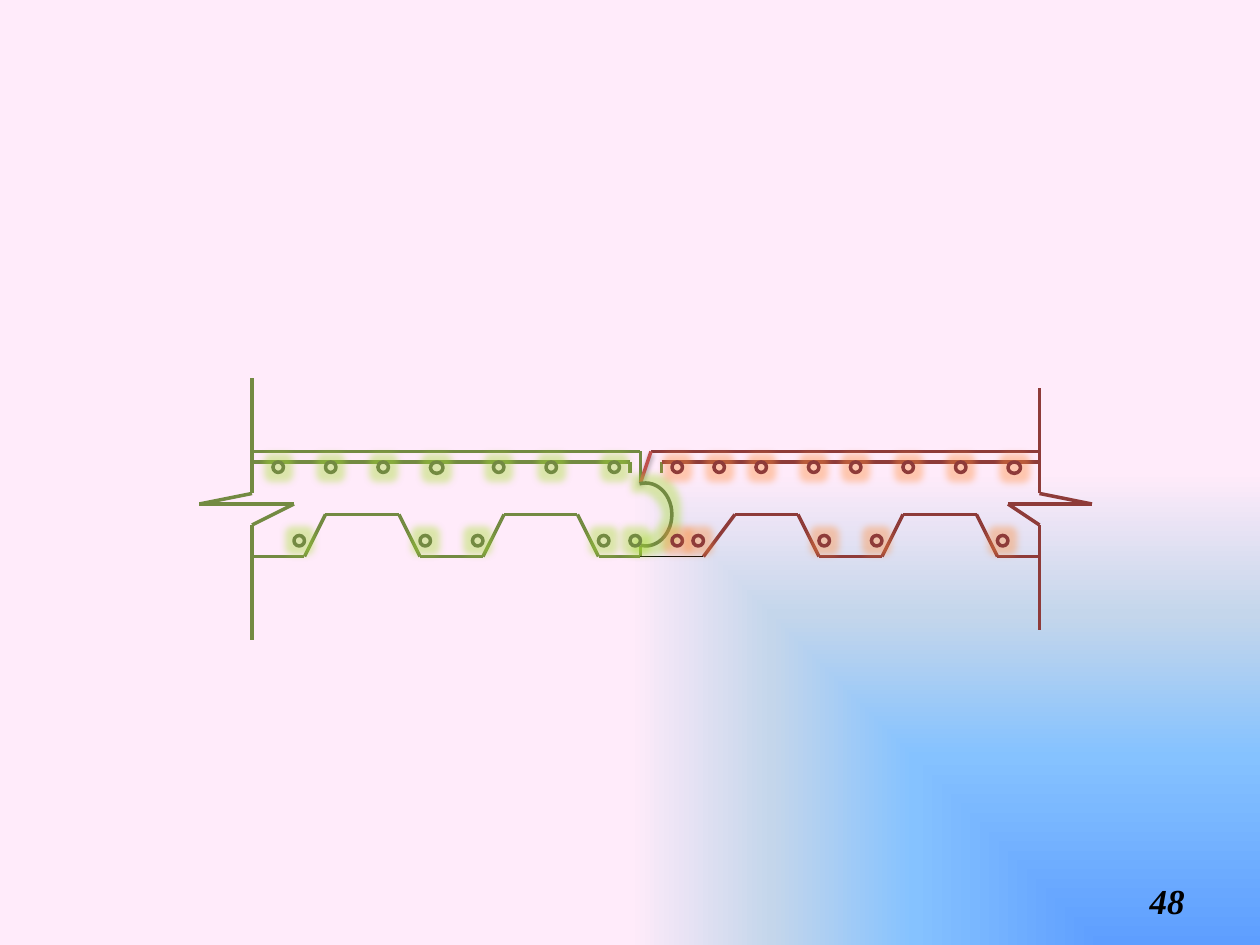
from itertools import pairwise

from lxml import etree
from pptx import Presentation
from pptx.dml.color import RGBColor
from pptx.enum.shapes import MSO_CONNECTOR, MSO_SHAPE
from pptx.enum.text import MSO_ANCHOR, PP_ALIGN
from pptx.oxml import parse_xml
from pptx.oxml.ns import qn
from pptx.util import Pt

STRAIGHT = MSO_CONNECTOR.STRAIGHT
OVAL, ARC = MSO_SHAPE.OVAL, MSO_SHAPE.ARC
MIDDLE, RIGHT = MSO_ANCHOR.MIDDLE, PP_ALIGN.RIGHT
NAMESPACES = (
    'xmlns:a="http://schemas.openxmlformats.org/drawingml/2006/main" '
    'xmlns:p="http://schemas.openxmlformats.org/presentationml/2006/main"'
)

COLORS = {
    "green": "738A42",
    "red": "8E3B39",
    "bright red": "C0504D",
    "black": "000000",
    "green glow": "A7DF34",
    "red glow": "FF8F3D",
}
BACKGROUND_STOPS = {0: "5E9EFF", 40: "85C2FF", 70: "C4D6EB", 100: "FFEBFA"}

# Levels of the panel section, from top to bottom
TOP, BAR, LIP, BREAK, RIB, BOTTOM = 258, 264, 276, 288, 294, 318
LEFT_EDGE, JOINT, RIGHT_EDGE = 144, 366, 594
RING = 6
WIDE_RING = (7.2, 6.5)

GREEN_PATHS = [
    [(LEFT_EDGE, TOP), (JOINT, TOP), (JOINT, LIP)],
    [(LEFT_EDGE, BOTTOM), (174, BOTTOM), (186, RIB), (228, RIB), (240, BOTTOM),
     (276, BOTTOM), (288, RIB), (330, RIB), (342, BOTTOM), (JOINT, BOTTOM), (JOINT, 312)],
    [(LEFT_EDGE, BAR), (360, BAR), (360, 270)],
    [(378, BAR), (378, 270)],
    [(LEFT_EDGE, 216), (LEFT_EDGE, 282), (114, BREAK), (168, BREAK),
     (LEFT_EDGE, 300), (LEFT_EDGE, 366)],
]
RED_PATHS = [
    [(372, TOP), (RIGHT_EDGE, TOP)],
    [(402, BOTTOM), (420, RIB), (456, RIB), (468, BOTTOM), (504, BOTTOM),
     (516, RIB), (558, RIB), (570, BOTTOM), (RIGHT_EDGE, BOTTOM)],
    [(378, BAR), (RIGHT_EDGE, BAR)],
    [(RIGHT_EDGE, 222), (RIGHT_EDGE, 282), (624, BREAK), (576, BREAK),
     (RIGHT_EDGE, 300), (RIGHT_EDGE, 360)],
]
RINGS = {
    "green": {BAR: [156, 186, 216, 246, 282, 312, 348], 306: [168, 240, 270, 342, 360]},
    "red": {BAR: [384, 408, 432, 462, 486, 516, 546, 576], 306: [384, 396, 468, 498, 570]},
}
WIDE_RING_LEFTS = {246, 576}


def color(name):
    return RGBColor.from_string(COLORS[name])


def set_background(slide):
    stops = "".join(
        f'<a:gs pos="{position * 1000}"><a:srgbClr val="{value}"/></a:gs>'
        for position, value in BACKGROUND_STOPS.items()
    )
    background = parse_xml(
        f"<p:bg {NAMESPACES}><p:bgPr><a:gradFill><a:gsLst>{stops}</a:gsLst>"
        '<a:path path="rect"><a:fillToRect l="100000" t="100000"/></a:path>'
        "</a:gradFill><a:effectLst/></p:bgPr></p:bg>"
    )
    slide.element.find(qn("p:cSld")).insert(0, background)


def add_effect(shape, kind, color_name, opacity, **settings):
    """Give the shape one effect, such as a glow or an outer shadow."""
    properties = shape.element.find(qn("p:spPr"))
    effects = etree.SubElement(properties, qn("a:effectLst"))
    values = {key: str(value) for key, value in settings.items()}
    effect = etree.SubElement(effects, qn(f"a:{kind}"), values)
    tint = etree.SubElement(effect, qn("a:srgbClr"), val=COLORS[color_name])
    etree.SubElement(tint, qn("a:alpha"), val=str(opacity * 1000))


def add_line(slide, start, end, color_name, width=2):
    line = slide.shapes.add_connector(STRAIGHT, *(Pt(value) for value in (*start, *end)))
    line.line.color.rgb = color(color_name)
    line.line.width = Pt(width)
    return line


def add_plain_line(slide, start, end, color_name, width=2):
    line = add_line(slide, start, end, color_name, width)
    etree.SubElement(line.element.find(qn("p:spPr")), qn("a:effectLst"))


def add_paths(slide, paths, color_name):
    for path in paths:
        for start, end in pairwise(path):
            add_plain_line(slide, start, end, color_name)


def add_glowing_outline(slide, kind, frame, color_name):
    outline = slide.shapes.add_shape(kind, *(Pt(value) for value in frame))
    outline.fill.background()
    outline.line.color.rgb = color(color_name)
    outline.line.width = Pt(2)
    add_effect(outline, "glow", f"{color_name} glow", 40, rad=Pt(8))
    return outline


def add_rings(slide):
    for color_name, rows in RINGS.items():
        for top, lefts in rows.items():
            for left in lefts:
                size = WIDE_RING if left in WIDE_RING_LEFTS else (RING, RING)
                add_glowing_outline(slide, OVAL, (left, top, *size), color_name)


def add_joint(slide):
    slope = add_line(slide, (372, TOP), (JOINT, LIP), "bright red")
    add_effect(slope, "outerShdw", "black", 38,
               blurRad=Pt(3.1), dist=Pt(1.6), dir=5400000, rotWithShape=0)
    add_plain_line(slide, (JOINT, BOTTOM), (402, BOTTOM), "black", width=1)
    arc = add_glowing_outline(slide, ARC, (354, LIP, 30, 36), "green")
    arc.adjustments[0] = 155.23
    arc.adjustments[1] = 59.84


def add_page_number(slide):
    box = slide.shapes.add_textbox(Pt(516), Pt(500.4), Pt(168), Pt(28.8))
    frame = box.text_frame
    frame.word_wrap = True
    frame.vertical_anchor = MIDDLE
    frame.text = "48"
    para = frame.paragraphs[0]
    para.alignment = RIGHT
    font = para.runs[0].font
    font.name = "Times New Roman"
    font.size = Pt(20)
    font.bold = font.italic = True
    font.color.rgb = color("black")


def main():
    deck = Presentation()
    deck.slide_width, deck.slide_height = Pt(720), Pt(540)
    page = deck.slides.add_slide(deck.slide_layouts[6])
    set_background(page)
    add_paths(page, GREEN_PATHS, "green")
    add_paths(page, RED_PATHS, "red")
    add_joint(page)
    add_rings(page)
    add_page_number(page)
    deck.save("out.pptx")


if __name__ == "__main__":
    main()
